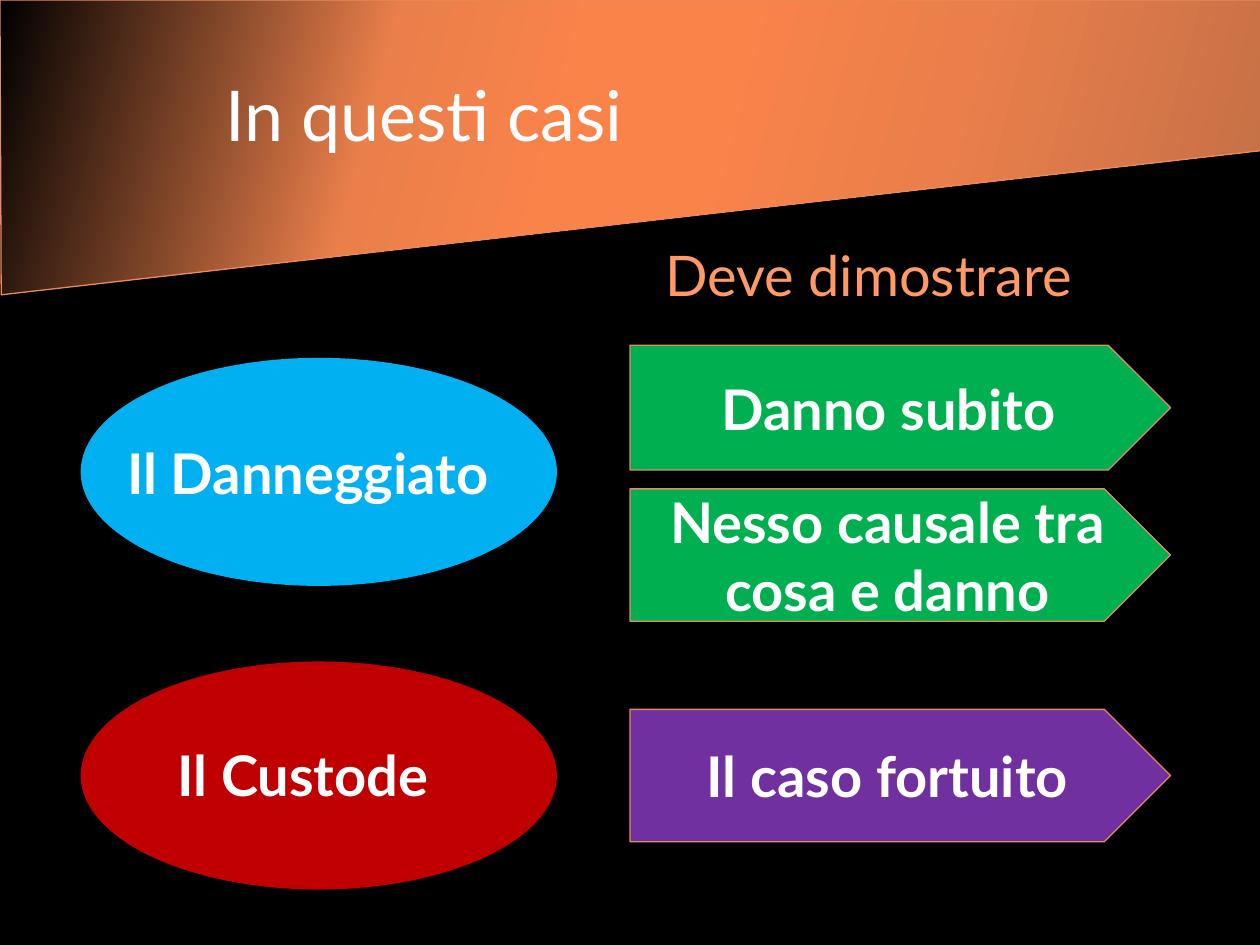
from lxml import etree
from pptx import Presentation
from pptx.dml.color import RGBColor
from pptx.enum.shapes import MSO_SHAPE
from pptx.enum.text import MSO_ANCHOR, PP_ALIGN
from pptx.oxml.ns import qn
from pptx.util import Inches, Pt

RECT = MSO_SHAPE.RECTANGLE
OVAL = MSO_SHAPE.OVAL
PLATE = MSO_SHAPE.PENTAGON
MIDDLE = MSO_ANCHOR.MIDDLE
CENTER = PP_ALIGN.CENTER

FONT = "Lato"
WHITE, BLACK, PEACH = "FFFFFF", "000000", "FF9966"
BLUE, RED, GREEN, VIOLET = "00B0F0", "C00000", "00B050", "7030A0"
EDGE = "E78A5C"
STOPS = [(0, BLACK), (30, "EA7F4B"), (45, "FA8349"),
         (55, "FA8349"), (73, "EA7F4B"), (100, "C36F46")]


def tint(code):
    """Turn a hex string into a colour."""
    return RGBColor.from_string(code)


def style(shape, fill=None, line=None):
    """Set fill and outline, and drop the shadow."""
    shape.shadow.inherit = False
    if fill:
        shape.fill.solid()
        shape.fill.fore_color.rgb = tint(fill)
    if line:
        shape.line.color.rgb = tint(line)
        shape.line.width = Pt(0.75)
    else:
        shape.line.fill.background()


def draw(shapes, kind, box, fill, line=None):
    """Add a preset shape in the given box."""
    shape = shapes.add_shape(kind, *map(Inches, box))
    style(shape, fill, line)
    return shape


def write(shape, text, size=32, color=WHITE, bold=False, align=None):
    """Put one run of text into a shape."""
    frame = shape.text_frame
    frame.word_wrap = True
    para = frame.paragraphs[0]
    para.alignment = align
    run = para.add_run()
    run.text = text
    run.font.name = FONT
    run.font.size = Pt(size)
    run.font.bold = bold
    run.font.color.rgb = tint(color)


def label(shapes, box, text, **look):
    """Add a text box."""
    shape = shapes.add_textbox(*map(Inches, box))
    write(shape, text, **look)
    return shape


def blend(shape, stops, angle):
    """Give a shape a linear gradient with many stops."""
    shape.fill.gradient()
    grad = shape.fill._xPr.find(qn("a:gradFill"))
    held = grad.find(qn("a:gsLst"))
    for old in list(held):
        held.remove(old)
    for place, code in stops:
        stop = etree.SubElement(held, qn("a:gs"), pos=str(place * 1000))
        etree.SubElement(stop, qn("a:srgbClr"), val=code)
    shape.fill.gradient_angle = angle


def banner(shapes, box):
    """Draw the slanted header with its title."""
    left, top, width, height = box
    ends = [(width, 0), (width, 1.19), (0.01, height)]
    pen = shapes.build_freeform(Inches(left), Inches(top))
    pen.add_line_segments(
        [(Inches(left + x), Inches(top + y)) for x, y in ends], close=True)
    shape = pen.convert_to_shape()
    style(shape, line=EDGE)
    blend(shape, STOPS, 345)
    label(shapes, (left + 1.69, top + 0.52, 3.62, 0.77),
          "In questi casi", size=40)


def party(shapes, box, text, color, inset):
    """Draw an ellipse grouped with its label."""
    left, top, width, height = box
    dx, dy, wide = inset
    group = shapes.add_group_shape().shapes
    draw(group, OVAL, box, color)
    name = label(group, (left + dx, top + dy, wide, 0.64), text, bold=True)
    style(name, color)


def proof(shapes, box, text, color):
    """Draw an arrow plate with centred text."""
    shape = draw(shapes, PLATE, box, color, EDGE)
    write(shape, text, bold=True, align=CENTER)
    frame = shape.text_frame
    frame.vertical_anchor = MIDDLE
    frame.margin_left = Inches(0.16)


def main():
    """Build and save the slide."""
    deck = Presentation()
    deck.slide_width, deck.slide_height = Inches(10), Inches(7.5)
    shapes = deck.slides.add_slide(deck.slide_layouts[6]).shapes
    draw(shapes, RECT, (0, 0, 10, 7.5), BLACK, BLACK)
    banner(shapes, (0, 0, 10.06, 2.34))
    label(shapes, (5.18, 1.86, 3.78, 0.64), "Deve dimostrare", color=PEACH)
    for top, text, color, inset in [
            (2.84, "Il Danneggiato", BLUE, (0.27, 0.59, 3.35)),
            (5.25, "Il Custode", RED, (0.67, 0.58, 2.43))]:
        party(shapes, (0.64, top, 3.78, 1.81), text, color, inset)
    for top, high, text, color in [
            (2.74, 0.99, "Danno subito", GREEN),
            (3.88, 1.05, "Nesso causale tra cosa e danno", GREEN),
            (5.63, 1.05, "Il caso fortuito", VIOLET)]:
        proof(shapes, (5, top, 4.29, high), text, color)
    deck.save("out.pptx")


if __name__ == "__main__":
    main()
